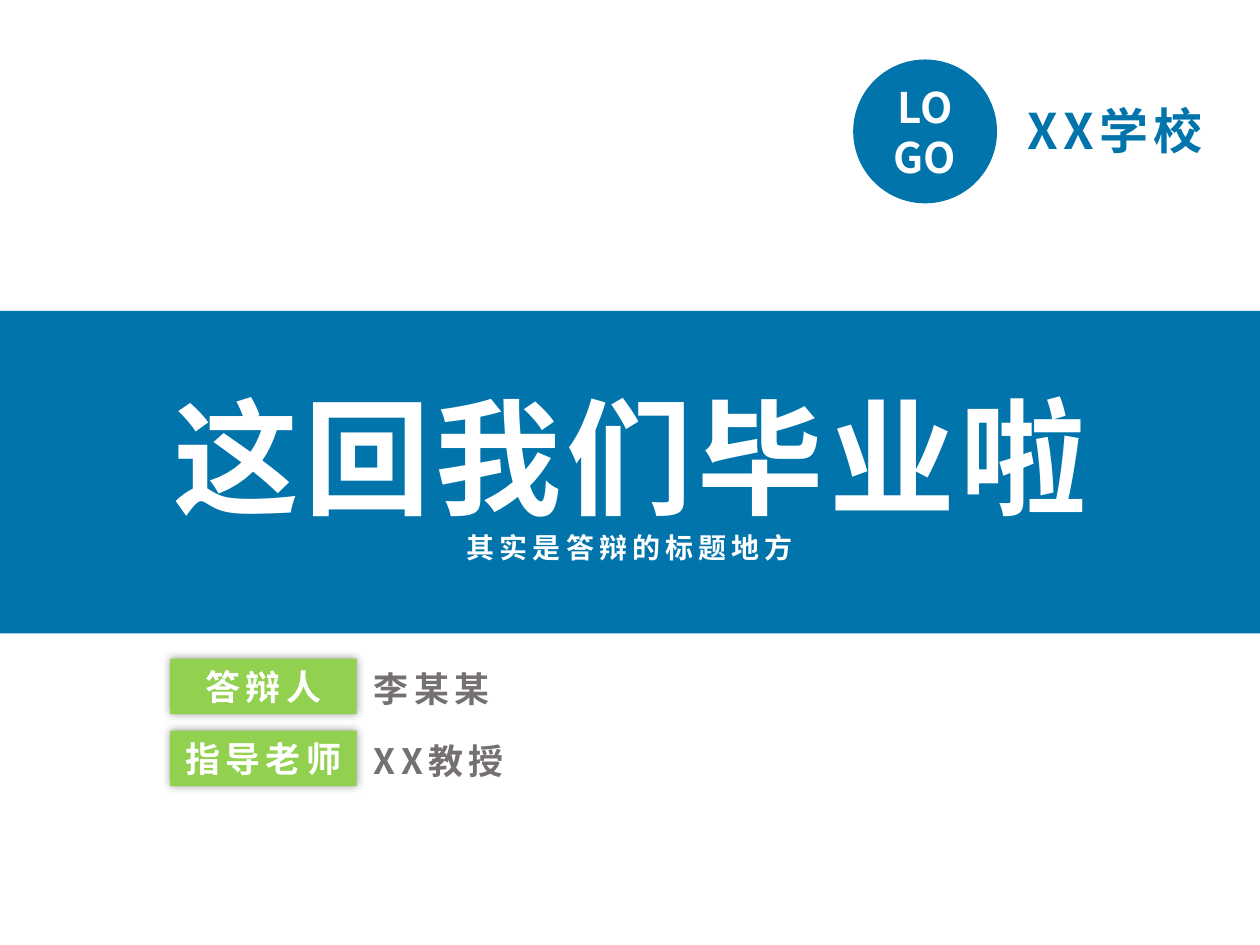
import pptx
import pptx.dml.color
import pptx.enum.shapes
import pptx.enum.text
import pptx.oxml
import pptx.oxml.ns
import pptx.util
from pptx.util import Cm

FONT = "Noto Sans CJK SC"
BLUE, GREEN, GREY, WHITE = "0174AB", "92D14F", "767171", "FFFFFF"
SHAPES = pptx.enum.shapes.MSO_SHAPE
ALIGN = pptx.enum.text.PP_ALIGN


def color(hex_text):
    return pptx.dml.color.RGBColor.from_string(hex_text)


def style(para, size, hex_text, align=ALIGN.LEFT, spacing=3):
    """Format a paragraph; size and letter spacing are in points."""
    para.alignment = align
    font = para.font
    font.size = pptx.util.Pt(size)
    font.bold = True
    font.color.rgb = color(hex_text)
    font.name = FONT
    properties = para._p.pPr.find(pptx.oxml.ns.qn("a:defRPr"))
    properties.set("spc", str(spacing * 100))
    latin = properties.find(pptx.oxml.ns.qn("a:latin"))
    latin.addnext(pptx.oxml.parse_xml(
        f'<a:ea {pptx.oxml.ns.nsdecls("a")} typeface="{FONT}"/>'))


def add_filled(page, kind, left, top, width, height, fill):
    shape = page.shapes.add_shape(kind, left, top, width, height)
    shape.shadow.inherit = False
    shape.fill.solid()
    shape.fill.fore_color.rgb = color(fill)
    shape.line.fill.background()
    return shape


def add_glow_shadow(shape):
    """Give the shape a soft, centred black shadow."""
    effects = shape._element.spPr.find(pptx.oxml.ns.qn("a:effectLst"))
    effects.append(pptx.oxml.parse_xml(
        f'<a:outerShdw {pptx.oxml.ns.nsdecls("a")} blurRad="63500" dist="0" '
        'algn="ctr" rotWithShape="0"><a:srgbClr val="000000">'
        '<a:alpha val="40000"/></a:srgbClr></a:outerShdw>'))


def add_text(page, left, top, width, height, lines, hex_text, align=ALIGN.LEFT):
    """Add a text box; lines holds (text, size) pairs."""
    box = page.shapes.add_textbox(left, top, width, height)
    frame = box.text_frame
    frame.word_wrap = True
    frame.text = "\n".join(text for text, size in lines)
    for para, (text, size) in zip(frame.paragraphs, lines):
        style(para, size, hex_text, align)


def fill_label(shape, text, size, spacing):
    frame = shape.text_frame
    frame.word_wrap = True
    frame.vertical_anchor = pptx.enum.text.MSO_ANCHOR.MIDDLE
    frame.text = text
    style(frame.paragraphs[0], size, WHITE, ALIGN.CENTER, spacing)


def add_school(page, left, top, diameter):
    emblem = add_filled(page, SHAPES.OVAL, left, top, diameter, diameter, BLUE)
    fill_label(emblem, "LOGO", 24, 0)
    add_text(page, left + diameter + Cm(0.37), top + Cm(0.7), Cm(4.5), Cm(1.45),
             [("XX学校", 28)], BLUE)


def add_title_band(page, left, top, width, height):
    add_filled(page, SHAPES.RECTANGLE, left, top, width, height, BLUE)
    margin = Cm(2.95)
    add_text(page, left + margin, top + Cm(1.25), width - 2 * margin, Cm(4.01),
             [("这回我们毕业啦", 72), ("其实是答辩的标题地方", 16)],
             WHITE, ALIGN.CENTER)


def add_people(page, left, top, label_width, row_height, people):
    pitch = Cm(1.45)
    for index, (role, name) in enumerate(people):
        row_top = top + index * pitch
        label = add_filled(page, SHAPES.RECTANGLE, left, row_top,
                           label_width, row_height, GREEN)
        add_glow_shadow(label)
        fill_label(label, role, 20, 3)
        add_text(page, left + label_width + Cm(0.1), row_top + Cm(0.05),
                 Cm(4.5), row_height, [(name, 20)], GREY)


def main():
    deck = pptx.Presentation()
    deck.slide_width, deck.slide_height = Cm(25.4), Cm(19.05)
    page = deck.slides.add_slide(deck.slide_layouts[6])
    add_school(page, Cm(17.2), Cm(1.2), Cm(2.9))
    add_title_band(page, 0, Cm(6.27), deck.slide_width, Cm(6.5))
    add_people(page, Cm(3.43), Cm(13.28), Cm(3.76), Cm(1.12),
               [("答辩人", "李某某"), ("指导老师", "XX教授")])
    deck.save("out.pptx")


if __name__ == "__main__":
    main()
